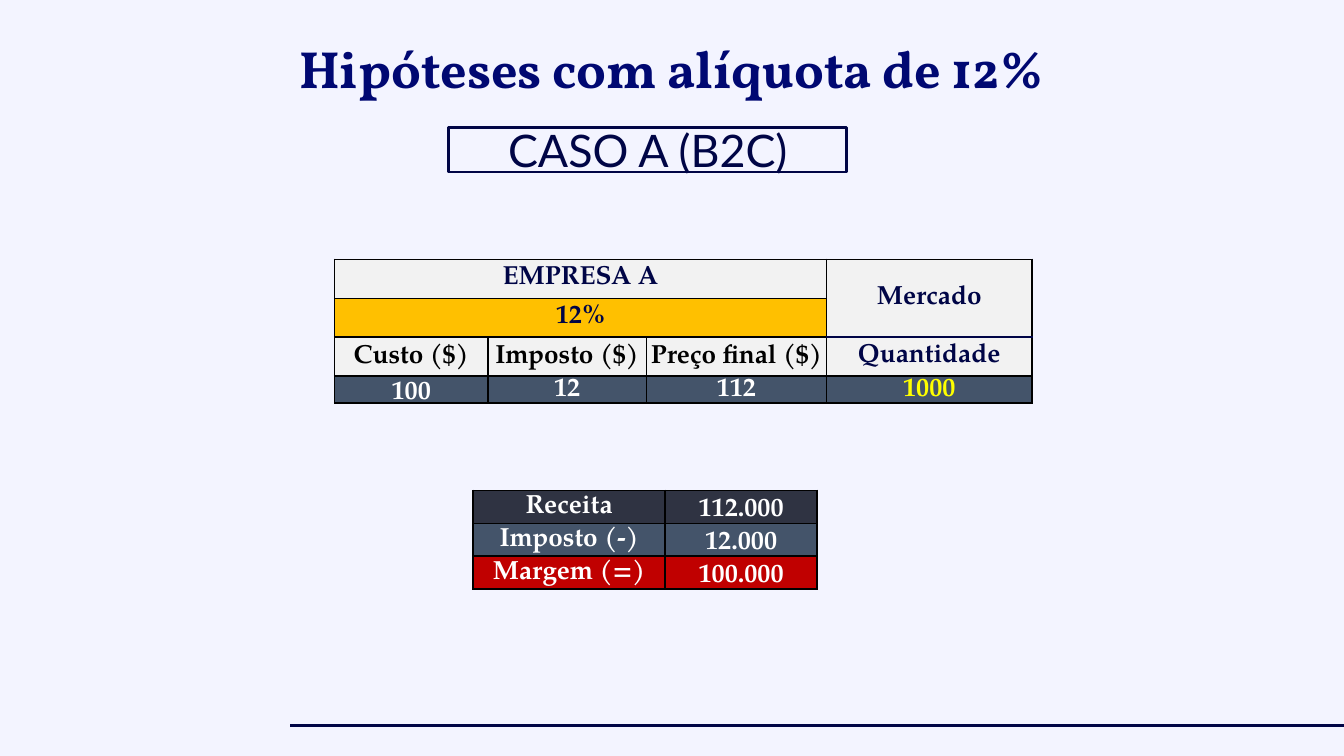
import pptx
import pptx.util
import pptx.dml.color
import pptx.enum.shapes
import pptx.enum.text
import pptx.oxml
import pptx.oxml.ns
from pptx.util import Inches

NAVY, BLACK, WHITE, YELLOW = "000546", "000000", "FFFFFF", "FFFF00"
LIGHT, AMBER, SLATE, DARK, RED = "F2F2F2", "FFC000", "44546A", "2F3342", "C00000"
TOP, MIDDLE, BOTTOM = (pptx.enum.text.MSO_ANCHOR.TOP, pptx.enum.text.MSO_ANCHOR.MIDDLE,
                       pptx.enum.text.MSO_ANCHOR.BOTTOM)
WIDE, TIGHT = (0.1, 0.05, 0.1, 0.05), (0.01, 0.01, 0.01, 0)


def rgb(color):
    return pptx.dml.color.RGBColor.from_string(color)


def write(holder, text, size, font, color, bold, anchor, insets):
    """Fill a text frame or a table cell with one centred paragraph."""
    holder.text = text
    holder.vertical_anchor = anchor
    holder.margin_left, holder.margin_top, holder.margin_right, holder.margin_bottom = map(Inches, insets)
    frame = getattr(holder, "text_frame", holder)
    frame.word_wrap = True
    paragraph = frame.paragraphs[0]
    paragraph.alignment = pptx.enum.text.PP_ALIGN.CENTER
    paragraph.font.size = pptx.util.Pt(size)
    paragraph.font.name = font
    paragraph.font.bold = bold
    paragraph.font.color.rgb = rgb(color)


deck = pptx.Presentation()
deck.slide_width = Inches(10)
deck.slide_height = deck.slide_width * 9 // 16
slide = deck.slides.add_slide(deck.slide_layouts[6])
slide.background.fill.solid()
slide.background.fill.fore_color.rgb = rgb("F3F4FF")

# Footer rule
footer_rule = slide.shapes.add_connector(
    pptx.enum.shapes.MSO_CONNECTOR.STRAIGHT, Inches(2.16), Inches(5.4), Inches(10), Inches(5.4))
footer_rule.line.color.rgb = rgb(NAVY)
footer_rule.line.width = pptx.util.Pt(1.5)
footer_rule._element.spPr.append(pptx.oxml.parse_xml(
    f'<a:effectLst {pptx.oxml.ns.nsdecls("a")}/>'))

# Title
title = slide.shapes.add_textbox(Inches(0.8), Inches(0.22), Inches(8.4), Inches(0.57))
write(title.text_frame, "Hipóteses com alíquota de 12%", 28, "Vollkorn", "000872", True, TOP, WIDE)

# Table contents: row, column, text, text color, fill, anchor, insets, (row span, column span)
company_cells = [
    (0, 0, "EMPRESA A", NAVY, LIGHT, MIDDLE, WIDE, (1, 3)),
    (0, 3, "Mercado", NAVY, LIGHT, MIDDLE, WIDE, (2, 1)),
    (1, 0, "12%", NAVY, AMBER, MIDDLE, WIDE, (1, 3)),
    (2, 3, "Quantidade", NAVY, LIGHT, MIDDLE, WIDE, (1, 1)),
    (3, 0, "100", WHITE, SLATE, BOTTOM, TIGHT, (1, 1)),
    (3, 1, "12", WHITE, SLATE, MIDDLE, TIGHT, (1, 1)),
    (3, 2, "112", WHITE, SLATE, MIDDLE, TIGHT, (1, 1)),
    (3, 3, "1000", YELLOW, SLATE, MIDDLE, TIGHT, (1, 1)),
]
for column, heading in enumerate(["Custo ($)", "Imposto ($)", "Preço final ($)"]):
    company_cells.append((2, column, heading, BLACK, LIGHT, MIDDLE, TIGHT, (1, 1)))

result_cells = []
for row, (label, amount, fill) in enumerate([
        ("Receita", "112.000", DARK), ("Imposto (-)", "12.000", SLATE), ("Margem (=)", "100.000", RED)]):
    result_cells.append((row, 0, label, WHITE, fill, MIDDLE, TIGHT, (1, 1)))
    result_cells.append((row, 1, amount, WHITE, fill, BOTTOM, TIGHT, (1, 1)))

# Company table and result table
for left, top, widths, heights, spacing, cells in [
        (2.49, 1.93, [1.14, 1.18, 1.34, 1.53], [0.29, 0.29, 0.29, 0.2], 0.8, company_cells),
        (3.52, 3.65, [1.43, 1.13], [0.24] * 3, 1.0, result_cells)]:
    table = slide.shapes.add_table(len(heights), len(widths), Inches(left), Inches(top),
                                   Inches(sum(widths)), Inches(sum(heights))).table
    table.first_row = table.horz_banding = False
    for column, width in zip(table.columns, widths):
        column.width = Inches(width)
    for row, height in zip(table.rows, heights):
        row.height = Inches(height)
    for row, column, text, color, fill, anchor, insets, (down, across) in cells:
        cell = table.cell(row, column)
        if down * across > 1:
            cell.merge(table.cell(row + down - 1, column + across - 1))
        write(cell, text, 14, "TeX Gyre Pagella", color, True, anchor, insets)
        # Every cell under a span gets the same spacing, fill and borders
        for r in range(row, row + down):
            for c in range(column, column + across):
                part = table.cell(r, c)
                part.text_frame.paragraphs[0].line_spacing = spacing
                part.text_frame.paragraphs[0].font.size = pptx.util.Pt(14)
                part.fill.solid()
                part.fill.fore_color.rgb = rgb(fill)
                properties = part._tc.get_or_add_tcPr()
                for position, side in enumerate(["lnL", "lnR", "lnT", "lnB"]):
                    under_market = (text, side) in [("Mercado", "lnB"), ("Quantidade", "lnT")]
                    properties.insert(position, pptx.oxml.parse_xml(
                        f'<a:{side} {pptx.oxml.ns.nsdecls("a")} w="12700"><a:solidFill>'
                        f'<a:srgbClr val="{NAVY if under_market else BLACK}"/></a:solidFill></a:{side}>'))

# Case label
case_label = slide.shapes.add_shape(
    pptx.enum.shapes.MSO_SHAPE.ROUNDED_RECTANGLE, Inches(3.34), Inches(0.95), Inches(2.96), Inches(0.33))
case_label.adjustments[0] = 0
case_label.shadow.inherit = False
case_label.fill.background()
case_label.line.color.rgb = rgb(NAVY)
case_label.line.width = pptx.util.Pt(1.5)
write(case_label.text_frame, "CASO A (B2C)", 24, "Lato", NAVY, False, MIDDLE, (0.1,) * 4)

deck.save("out.pptx")
